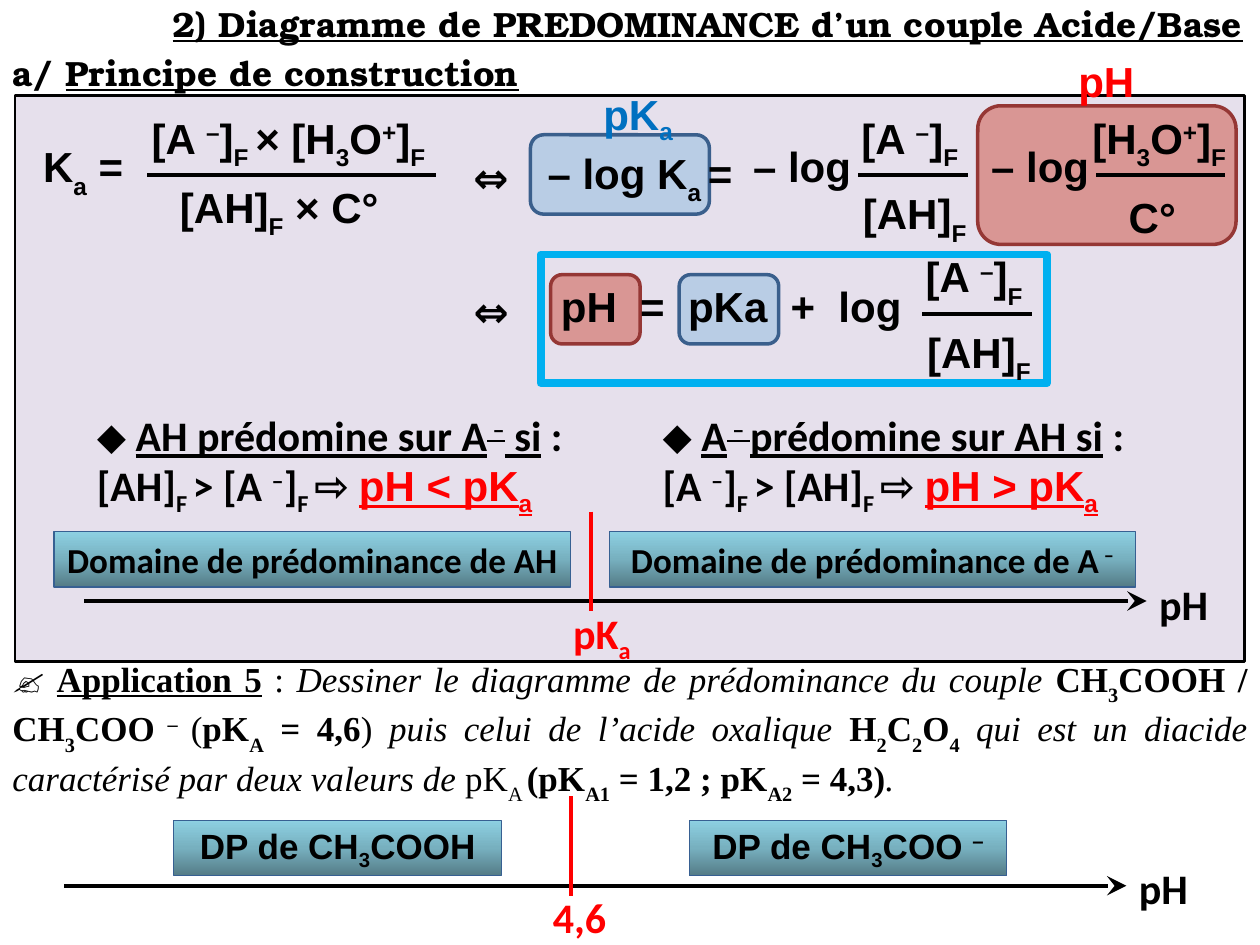
from copy import deepcopy
from dataclasses import dataclass, replace

from lxml.etree import SubElement
from pptx import Presentation
from pptx.dml.color import RGBColor
from pptx.enum.shapes import MSO_CONNECTOR, MSO_SHAPE
from pptx.enum.text import MSO_ANCHOR, MSO_AUTO_SIZE, PP_ALIGN
from pptx.oxml.ns import qn
from pptx.util import Inches, Pt

BLACK = RGBColor(0x00, 0x00, 0x00)
RED = RGBColor(0xFF, 0x00, 0x00)
BLUE = RGBColor(0x00, 0x70, 0xC0)
CYAN = RGBColor(0x00, 0xB0, 0xF0)
LILAC = RGBColor(0xE6, 0xE0, 0xEC)
PALE_BLUE = RGBColor(0xB9, 0xCD, 0xE5)
DARK_BLUE = RGBColor(0x3A, 0x5F, 0x8C)
ROSE = RGBColor(0xD9, 0x96, 0x94)
DARK_RED = RGBColor(0x95, 0x37, 0x35)
DOMAIN_LINE = RGBColor(0x37, 0x60, 0x92)
DOMAIN_STOPS = (
    (0, RGBColor(0x54, 0x7B, 0x86)),
    (0.5, RGBColor(0x77, 0xB0, 0xBF)),
    (1, RGBColor(0x8D, 0xD0, 0xE2)),
)


@dataclass(frozen=True)
class TextStyle:
    font: str = "Arial"
    size: int = 24
    color: RGBColor = BLACK
    bold: bool = True
    subscript: int = -30
    align: PP_ALIGN = PP_ALIGN.LEFT
    wrap: bool = False
    anchor: MSO_ANCHOR = MSO_ANCHOR.TOP


@dataclass(frozen=True)
class Box:
    left: float
    top: float
    width: float
    height: float
    fill: RGBColor | None
    line: RGBColor
    line_width: float
    kind: MSO_SHAPE = MSO_SHAPE.ROUNDED_RECTANGLE


@dataclass(frozen=True)
class Label:
    left: float
    top: float
    width: float
    text: str
    style: TextStyle
    height: float = 0.5


@dataclass(frozen=True)
class Domain:
    left: float
    top: float
    width: float
    text: str
    font: str


FORMULA = TextStyle()
CENTERED = TextStyle(align=PP_ALIGN.CENTER)
SYMBOL = TextStyle("Calibri", subscript=-25)
HEADING = TextStyle("TeX Gyre Bonum", 20, align=PP_ALIGN.JUSTIFY)
CONDITION = TextStyle("Calibri", bold=False, subscript=-25, wrap=True)
EXERCISE = TextStyle("Times New Roman", 20, bold=False, align=PP_ALIGN.JUSTIFY,
                     wrap=True, anchor=MSO_ANCHOR.MIDDLE)

BOXES = [
    Box(0.12, 0.76, 9.76, 4.49, LILAC, BLACK, 1.5, MSO_SHAPE.RECTANGLE),
    Box(5.39, 2.18, 0.79, 0.55, PALE_BLUE, DARK_BLUE, 2),
    Box(4.37, 2.18, 0.71, 0.55, ROSE, DARK_RED, 2),
    Box(4.21, 1.07, 1.42, 0.63, PALE_BLUE, DARK_BLUE, 2),
    Box(7.76, 0.84, 2.05, 1.1, ROSE, DARK_RED, 2),
    Box(4.29, 2.02, 4.02, 1.02, None, CYAN, 4.5, MSO_SHAPE.RECTANGLE),
]
LABELS = [
    Label(0, 0.36, 4.25, "a/ $Principe de construction$", HEADING, 0.44),
    Label(0.23, 1.07, 0.86, "K{a} =", CENTERED),
    Label(1.06, 0.84, 2.46, "[A «–»]{F }× [H{3}O«+»]{F}", CENTERED),
    Label(1.33, 1.39, 1.78, "[AH]{F} × C°", FORMULA),
    Label(3.66, 1.15, 0.87, "⇔", SYMBOL),
    Label(4.21, 1.12, 1.74, "– log K{a }=", CENTERED),
    Label(5.87, 1.07, 0.99, "– log", CENTERED),
    Label(7.76, 1.07, 0.99, "– log", CENTERED),
    Label(8.54, 0.84, 1.32, "[H{3}O«+»]{F}", CENTERED),
    Label(8.86, 1.47, 0.58, "C°", FORMULA),
    Label(3.66, 2.22, 0.71, "⇔", SYMBOL),
    Label(4.34, 2.18, 3.02, "pH  =  pKa  +  log ", CENTERED),
    Label(0.67, 3.2, 3.94, "⬥ *$AH prédomine sur A« –» si$ :\n"
          "[AH]{F }> [A «–»]{F }⇨ |$pH < pK{a}", CONDITION, 0.91),
    Label(5.16, 3.2, 4.09, "⬥ *$A« – »prédomine sur AH si$ :\n"
          "[A «–»]{F }> [AH]{F }⇨ |$pH > pK{a}", CONDITION, 0.91),
    Label(0, 5.25, 10, "*✍ $Application 5$* : ~Dessiner le diagramme de prédominance "
          "du couple ~*CH{3}COOH / CH{3}COO« – »*(*pK{A} = 4,6*) ~puis celui de l’acide "
          "oxalique ~*H{2}C{2}O{4}*~ qui est un diacide caractérisé par deux valeurs de "
          "~pK{A }*(pK{A1} = 1,2 ; pK{A2} = 4,3)*~.", EXERCISE, 1.11),
    Label(8.46, 0.39, 0.65, "pH", replace(FORMULA, color=RED)),
    Label(4.69, 0.65, 0.78, "pK{a}", replace(FORMULA, color=BLUE, subscript=-25)),
]
DOMAINS = [
    Domain(0.43, 4.22, 4.1, "Domaine de prédominance de AH", "Calibri"),
    Domain(4.84, 4.22, 4.17, "Domaine de prédominance de A« –»", "Calibri"),
    Domain(1.38, 6.51, 2.6, "DP de CH{3}COOH", "Arial"),
    Domain(5.47, 6.51, 2.52, "DP de CH{3}COO «–»", "Arial"),
]


def write_text(shape, text: str, style: TextStyle) -> None:
    """Marks: {sub} «super» *bold* $underline$ ~italic~ |red Arial|; bold lasts across lines."""
    frame = shape.text_frame
    frame.word_wrap = style.wrap
    frame.auto_size = MSO_AUTO_SIZE.SHAPE_TO_FIT_TEXT
    frame.vertical_anchor = style.anchor
    levels = {"{": style.subscript, "}": 0, "«": 30, "»": 0}
    toggles = {"*": "bold", "$": "underline", "~": "italic"}
    values = {"name": style.font, "size": Pt(style.size), "bold": style.bold,
              "underline": False, "italic": False}
    color, baseline = style.color, 0
    for index, line in enumerate(text.split("\n")):
        paragraph = frame.add_paragraph() if index else frame.paragraphs[0]
        paragraph.alignment = style.align
        pending = ""
        for character in line + "\0":
            if character not in "{}«»*$~|\0":
                pending += character
                continue
            if pending:
                run = paragraph.add_run()
                run.text = pending
                for name, value in values.items():
                    setattr(run.font, name, value)
                run.font.color.rgb = color
                if baseline:
                    run._r.get_or_add_rPr().set("baseline", str(baseline * 1000))
                pending = ""
            if character in levels:
                baseline = levels[character]
            elif character in toggles:
                values[toggles[character]] = not values[toggles[character]]
            elif character == "|":
                color, values["name"] = RED, "Arial"


def draw_box(slide, box: Box):
    shape = slide.shapes.add_shape(box.kind, *map(Inches, (box.left, box.top, box.width, box.height)))
    shape.shadow.inherit = False
    if box.fill is None:
        shape.fill.background()
    else:
        shape.fill.solid()
        shape.fill.fore_color.rgb = box.fill
    shape.line.color.rgb = box.line
    shape.line.width = Pt(box.line_width)
    return shape


def draw_label(slide, label: Label) -> None:
    shape = slide.shapes.add_textbox(*map(Inches, (label.left, label.top, label.width, label.height)))
    write_text(shape, label.text, label.style)


def draw_domain(slide, domain: Domain) -> None:
    shape = draw_box(slide, Box(domain.left, domain.top, domain.width, 0.44, None,
                                DOMAIN_LINE, 0.75, MSO_SHAPE.RECTANGLE))
    shape.fill.gradient()
    shape.fill.gradient_angle = 90
    stop_list = shape._element.spPr.find(qn("a:gradFill")).find(qn("a:gsLst"))
    stop_list.append(deepcopy(stop_list[-1]))
    for stop, (position, color) in zip(shape.fill.gradient_stops, DOMAIN_STOPS):
        stop.position = position
        stop.color.rgb = color
    write_text(shape, domain.text, TextStyle(domain.font, 20, subscript=-25, wrap=True,
                                             align=PP_ALIGN.CENTER, anchor=MSO_ANCHOR.MIDDLE))


def draw_line(slide, start: tuple[float, float], end: tuple[float, float],
              color: RGBColor = BLACK, arrow: bool = False) -> None:
    line = slide.shapes.add_connector(MSO_CONNECTOR.STRAIGHT, *map(Inches, start + end))
    line.line.color.rgb = color
    line.line.width = Pt(2.25)
    if arrow:
        SubElement(line.line._get_or_add_ln(), qn("a:tailEnd"), type="stealth", w="lg", len="lg")
    SubElement(line._element.spPr, qn("a:effectLst"))


def draw_base_acid_ratio(slide, left: float, top: float) -> None:
    draw_label(slide, Label(left, top, 0.98, "[A «–»]{F}", CENTERED))
    draw_line(slide, (left + 0.08, top + 0.55), (left + 0.95, top + 0.55))
    draw_label(slide, Label(left + 0.02, top + 0.6, 1.05, "[AH]{F}", FORMULA))


def draw_ph_axis(slide, left: float, top: float, threshold: str, threshold_width: float) -> None:
    right, mark = left + 8.43, left + 4.02
    draw_line(slide, (left, top), (right, top), arrow=True)
    draw_line(slide, (mark, top - 0.71), (mark, top + 0.08), RED)
    draw_label(slide, Label(right, top - 0.23, 0.59, "pH", SYMBOL))
    draw_label(slide, Label(mark - 0.24, top, threshold_width, threshold, replace(SYMBOL, color=RED)))


def main() -> None:
    presentation = Presentation()
    presentation.slide_width, presentation.slide_height = Inches(10), Inches(7.5)
    slide = presentation.slides.add_slide(presentation.slide_layouts[5])
    title = slide.shapes.title
    title.left, title.top, title.width, title.height = map(Inches, (1.27, -0.03, 8.75, 0.44))
    write_text(title, "$2) Diagramme de PREDOMINANCE d’un couple Acide/Base$", HEADING)
    for box in BOXES:
        draw_box(slide, box)
    for label in LABELS:
        draw_label(slide, label)
    for left, right in ((1.17, 3.46), (8.7, 9.72)):
        draw_line(slide, (left, 1.39), (right, 1.39))
    for left, top in ((6.73, 0.84), (7.24, 1.94)):
        draw_base_acid_ratio(slide, left, top)
    draw_ph_axis(slide, 0.67, 4.77, "pK{a}", 0.67)
    draw_ph_axis(slide, 0.51, 7.03, "4,6", 0.63)
    for domain in DOMAINS:
        draw_domain(slide, domain)
    presentation.save("out.pptx")


if __name__ == "__main__":
    main()
